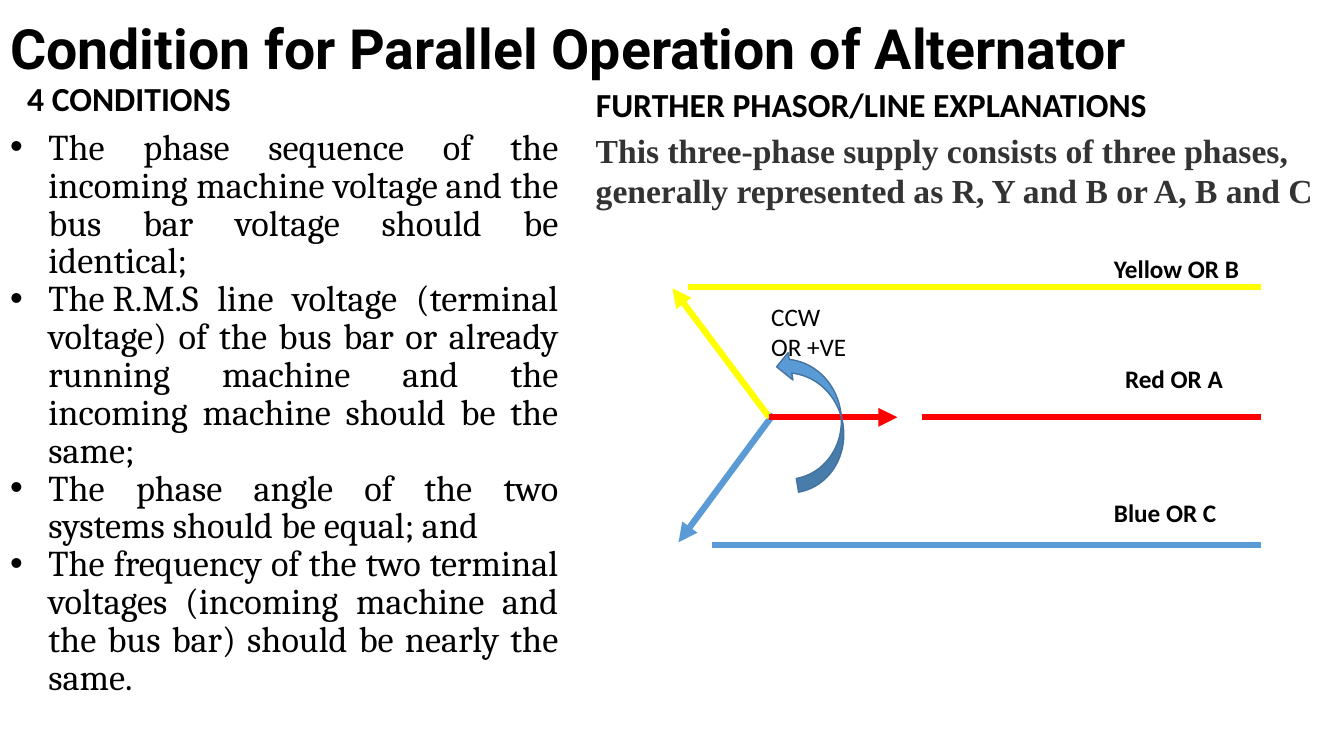
import pptx
import pptx.util
import pptx.dml.color
import pptx.enum.shapes
import pptx.enum.text
import pptx.oxml
import pptx.oxml.ns
from pptx.util import Inches

ALIGN = pptx.enum.text.PP_ALIGN
ANCHOR = pptx.enum.text.MSO_ANCHOR
BLACK, RED, YELLOW, BLUE = "000000", "FF0000", "FFFF00", "5B9BD5"

CONDITIONS = [
    "The phase sequence of the incoming machine voltage\u00a0and the bus bar "
    "voltage should be identical;",
    "The\u00a0R.M.S line voltage (terminal voltage) of the bus bar or already "
    "running machine and the incoming machine should be the same;",
    "The phase angle of the two systems should be equal; and",
    "The frequency of the two terminal voltages (incoming machine and the "
    "bus bar) should be nearly the same.",
]


def rgb(color):
    return pptx.dml.color.RGBColor.from_string(color)


def place(sp, left, top, width, height):
    sp.left, sp.top = Inches(left), Inches(top)
    sp.width, sp.height = Inches(width), Inches(height)


def add_run(p, text, size, font="Calibri", color=BLACK, bold=False):
    r = p.add_run()
    r.text = text
    r.font.size = pptx.util.Pt(size)
    r.font.name = font
    r.font.bold = bold
    r.font.color.rgb = rgb(color)


def fill_placeholder(sp, box, anchor, texts, size, font, bold,
                     align=ALIGN.LEFT, spacing=0.9, before=0, after=0):
    """Move a placeholder and write one paragraph per text."""
    place(sp, *box)
    tf = sp.text_frame
    tf.auto_size = pptx.enum.text.MSO_AUTO_SIZE.NONE
    tf.word_wrap = True
    tf.vertical_anchor = anchor
    for i, text in enumerate(texts):
        p = tf.add_paragraph() if i else tf.paragraphs[0]
        p.alignment = align
        p.line_spacing = spacing
        p.space_before = pptx.util.Pt(before)
        p.space_after = pptx.util.Pt(after)
        add_run(p, text, size, font, bold=bold)
    return tf


def add_bullets(tf, indent):
    for p in tf.paragraphs:
        pPr = p._p.get_or_add_pPr()
        pPr.set("marL", str(Inches(indent)))
        pPr.set("indent", str(-Inches(indent)))
        for tag, key, value in (("a:buFont", "typeface", "Arial"),
                                ("a:buChar", "char", "•")):
            bullet = pptx.oxml.parse_xml(
                f'<{tag} {pptx.oxml.ns.nsdecls("a")} {key}="{value}"/>')
            pPr.append(bullet)


def add_label(s, text, left, top, width, height, size=18, **style):
    tf = s.shapes.add_textbox(Inches(left), Inches(top),
                              Inches(width), Inches(height)).text_frame
    tf.word_wrap = True
    add_run(tf.paragraphs[0], text, size, **style)


def add_line(s, start, end, color, arrow=False):
    c = s.shapes.add_connector(pptx.enum.shapes.MSO_CONNECTOR.STRAIGHT,
                               *map(Inches, start + end))
    c.line.color.rgb = rgb(color)
    c.line.width = pptx.util.Pt(4.5)
    ns = pptx.oxml.ns.nsdecls("a")
    if arrow:
        c.line._get_or_add_ln().append(
            pptx.oxml.parse_xml(f'<a:tailEnd {ns} type="triangle"/>'))
    c._element.spPr.append(pptx.oxml.parse_xml(f"<a:effectLst {ns}/>"))


def add_rotation_arrow(s):
    sp = s.shapes.add_shape(pptx.enum.shapes.MSO_SHAPE.CURVED_UP_ARROW,
                            Inches(7.37), Inches(3.87), Inches(1.4), Inches(0.55))
    sp.rotation = 260
    sp.shadow.inherit = False
    sp.fill.solid()
    sp.fill.fore_color.rgb = rgb(BLUE)
    sp.line.color.rgb = rgb("43739E")
    sp.line.width = pptx.util.Pt(1)


def main():
    prs = pptx.Presentation()
    prs.slide_width, prs.slide_height = Inches(13.33), Inches(7.5)
    s = prs.slides.add_slide(prs.slide_layouts[4])
    title, left_head, left_body, right_head, right_body = s.placeholders
    right_body._element.getparent().remove(right_body._element)

    # Title and headings
    fill_placeholder(title, (0, 0, 13.33, 0.89), ANCHOR.MIDDLE,
                     ["Condition for Parallel Operation of Alternator"],
                     39.6, "Roboto", True, spacing=1.07, after=9)
    fill_placeholder(left_head, (0.17, 0.74, 5.64, 0.49), ANCHOR.BOTTOM,
                     ["4 CONDITIONS"], 24, "Calibri", True, before=10)
    fill_placeholder(right_head, (5.81, 0.84, 7.52, 0.44), ANCHOR.BOTTOM,
                     ["FURTHER PHASOR/LINE EXPLANATIONS"], 24, "Calibri", True,
                     spacing=0.8, before=10)

    # List of conditions
    tf = fill_placeholder(left_body, (0, 1.24, 5.64, 6.26), ANCHOR.TOP,
                          CONDITIONS, 25.9, "Cambria", False,
                          align=ALIGN.JUSTIFY, spacing=0.87)
    add_bullets(tf, 0.38)

    # Explanation
    add_label(s, "This three-phase supply consists of three phases, generally "
              "represented as R, Y and B or A, B and C", 5.81, 1.24, 7.52, 0.91,
              size=24, font="Times New Roman", color="333333", bold=True)

    # Phasors
    star = (7.63, 4.14)
    add_line(s, (7.67, 4.11), (6.73, 5.38), BLUE, arrow=True)
    add_line(s, star, (6.67, 2.86), YELLOW, arrow=True)
    add_line(s, star, (8.9, 4.14), RED, arrow=True)

    # Phase lines with their names
    for color, start, y, name, left, top, width in (
            (RED, 9.14, 4.14, "Red OR A", 11.06, 3.56, 1.26),
            (YELLOW, 6.82, 2.85, "Yellow OR B", 10.95, 2.46, 1.56),
            (BLUE, 7.06, 5.41, "Blue OR C", 10.95, 4.88, 1.56)):
        add_line(s, (start, y), (12.51, y), color)
        add_label(s, name, left, top, width, 0.4, bold=True)

    # Direction of rotation
    add_rotation_arrow(s)
    add_label(s, "CCW OR +VE", 7.55, 2.94, 1.03, 0.71)

    prs.save("out.pptx")


if __name__ == "__main__":
    main()
